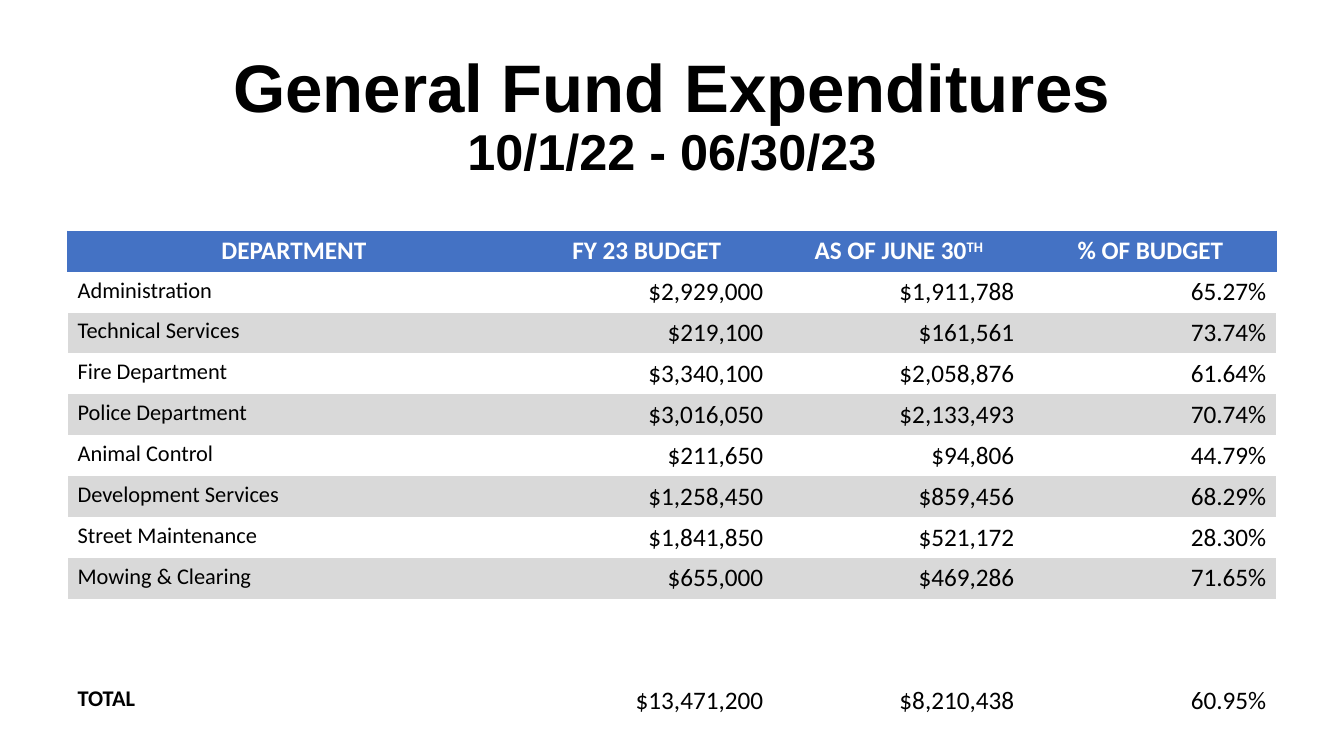
from lxml import etree
from pptx import Presentation
from pptx.dml.color import RGBColor
from pptx.enum.text import MSO_ANCHOR, PP_ALIGN
from pptx.oxml.ns import qn
from pptx.util import Inches, Pt

LEFT, CENTER, RIGHT = PP_ALIGN.LEFT, PP_ALIGN.CENTER, PP_ALIGN.RIGHT
MIDDLE = MSO_ANCHOR.MIDDLE
BLUE, GREY, BLACK, WHITE = "4472C4", "D9D9D9", "000000", "FFFFFF"
PLAIN_TABLE_STYLE = "{2D5ABB26-0587-4C30-8999-92F81FD0307C}"


def style(span, font, size, color, bold):
    span.font.name = font
    span.font.size = Pt(size)
    span.font.color.rgb = RGBColor.from_string(color)
    span.font.bold = bold


def add_border(cell, side, position):
    line = etree.Element(qn(f"a:ln{side}"), w=str(Pt(0.5)))
    fill = etree.SubElement(line, qn("a:solidFill"))
    etree.SubElement(fill, qn("a:srgbClr"), val=BLUE)
    cell._tc.get_or_add_tcPr().insert(position, line)


deck = Presentation()
deck.slide_width, deck.slide_height = Inches(13.33), Inches(7.5)
page = deck.slides.add_slide(deck.slide_layouts[5])

# Title
title = page.shapes.title
title.left, title.top = Inches(0.67), Inches(0.26)
title.width, title.height = Inches(11.99), Inches(1.82)
title.text_frame.text = "General Fund Expenditures\v10/1/22 - 06/30/23"
title.text_frame.vertical_anchor = MIDDLE
para = title.text_frame.paragraphs[0]
para.alignment = CENTER
para.line_spacing = 0.9
for span, size in zip(para.runs, (48, 36)):
    style(span, "Arial", size, BLACK, True)

# Budget figures, with two empty rows above the total
rows = [
    ("DEPARTMENT", "FY 23 BUDGET", "AS OF JUNE 30", "% OF BUDGET"),
    ("Administration", "$2,929,000", "$1,911,788", "65.27%"),
    ("Technical Services", "$219,100", "$161,561", "73.74%"),
    ("Fire Department", "$3,340,100", "$2,058,876", "61.64%"),
    ("Police Department", "$3,016,050", "$2,133,493", "70.74%"),
    ("Animal Control", "$211,650", "$94,806", "44.79%"),
    ("Development Services", "$1,258,450", "$859,456", "68.29%"),
    ("Street Maintenance", "$1,841,850", "$521,172", "28.30%"),
    ("Mowing & Clearing", "$655,000", "$469,286", "71.65%"),
    ("",) * 4,
    ("",) * 4,
    ("TOTAL", "$13,471,200", "$8,210,438", "60.95%"),
]
widths = (4.49, 2.51, 2.49, 2.5)

# Table
table = page.shapes.add_table(len(rows), len(widths), Inches(0.67), Inches(2.29),
                              Inches(11.99), Inches(4.87)).table
table.first_row = True
table.horz_banding = False
table._tbl.tblPr.find(qn("a:tableStyleId")).text = PLAIN_TABLE_STYLE
for column, width in zip(table.columns, widths):
    column.width = Inches(width)

for row_index, values in enumerate(rows):
    header = row_index == 0
    banded = row_index in range(2, 9, 2)
    for column_index, value in enumerate(values):
        cell = table.cell(row_index, column_index)
        if header or banded:
            cell.fill.solid()
            cell.fill.fore_color.rgb = RGBColor.from_string(BLUE if header else GREY)
        else:
            cell.fill.background()
        if not value:
            continue
        name_column = column_index == 0
        cell.text = value
        para = cell.text_frame.paragraphs[0]
        para.alignment = CENTER if header else LEFT if name_column else RIGHT
        style(para.runs[0], "Calibri", 16 if name_column and not header else 18,
              WHITE if header else BLACK, header or value == "TOTAL")

# Header borders and the raised ordinal
header_cells = [table.cell(0, index) for index in range(len(widths))]
for cell in header_cells:
    add_border(cell, "T", 0)
add_border(header_cells[0], "L", 0)
add_border(header_cells[-1], "R", 0)
ordinal = header_cells[2].text_frame.paragraphs[0].add_run()
ordinal.text = "TH"
style(ordinal, "Calibri", 18, WHITE, True)
ordinal._r.get_or_add_rPr().set("baseline", "30000")

deck.save("out.pptx")
